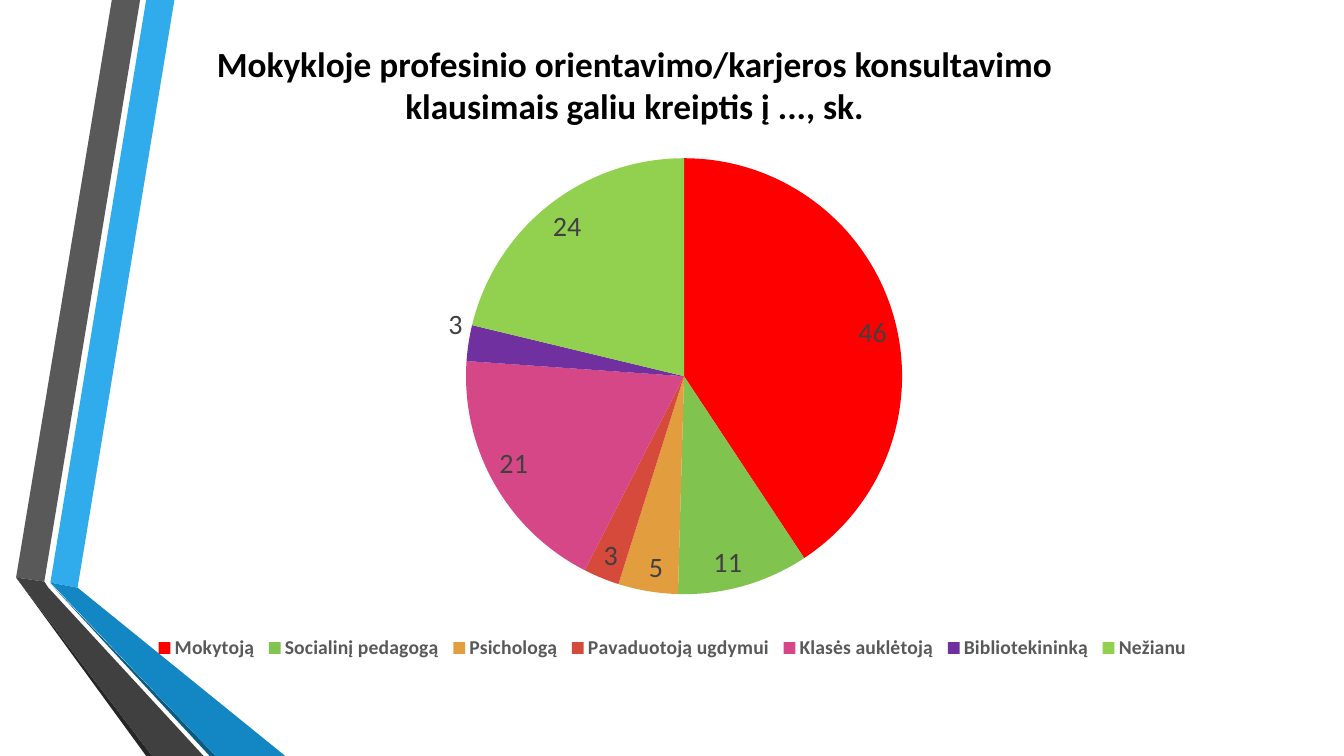
from dataclasses import dataclass

from lxml import etree
from pptx import Presentation
from pptx.chart.chart import Chart
from pptx.chart.data import CategoryChartData
from pptx.dml.color import RGBColor
from pptx.enum.chart import XL_CHART_TYPE, XL_LABEL_POSITION, XL_LEGEND_POSITION
from pptx.enum.text import MSO_ANCHOR, PP_ALIGN
from pptx.oxml.ns import qn
from pptx.slide import Slide
from pptx.text.text import Font
from pptx.util import Inches, Pt

PIE = XL_CHART_TYPE.PIE
INSIDE = XL_LABEL_POSITION.INSIDE_END
OUTSIDE = XL_LABEL_POSITION.OUTSIDE_END
BOTTOM = XL_LEGEND_POSITION.BOTTOM
MIDDLE = MSO_ANCHOR.MIDDLE
CENTER = PP_ALIGN.CENTER

FACE = "Calibri"
TITLE = "Mokykloje profesinio orientavimo/karjeros konsultavimo klausimais galiu kreiptis į ..., sk."
COLORS = {
    "sky": "30ACEC", "blue": "1287C3", "navy": "0C5A82",
    "gray": "595959", "dark": "404040", "coal": "262626", "black": "000000",
    "red": "FF0000", "green": "80C34F", "orange": "E29D3E", "brick": "D64A3B",
    "pink": "D64787", "purple": "7030A0", "lime": "92D050",
}


@dataclass(frozen=True)
class Band:
    color: str
    points: tuple[tuple[float, float], ...]


@dataclass(frozen=True)
class Slice:
    name: str
    value: int
    color: str
    outside: bool = False


@dataclass(frozen=True)
class Frame:
    """Part of the chart area, as fractions of its size."""
    x: float
    y: float
    w: float
    h: float


BANDS = (
    Band("sky", ((0.5, 5.78), (0.77, 5.83), (1.73, 0), (1.45, 0))),
    Band("gray", ((1.39, 0), (1.11, 0), (0.16, 5.73), (0.44, 5.77))),
    Band("coal", ((0.16, 5.73), (1.45, 7.5), (1.51, 7.5))),
    Band("navy", ((0.5, 5.79), (2.08, 7.5), (2.14, 7.5))),
    Band("blue", ((0.5, 5.78), (2.14, 7.5), (2.83, 7.5), (0.77, 5.83))),
    Band("dark", ((2.02, 7.5), (0.48, 5.83), (0.44, 5.77), (0.16, 5.73), (1.51, 7.5))),
)
SLICES = (
    Slice("Mokytoją", 46, "red"),
    Slice("Socialinį pedagogą", 11, "green"),
    Slice("Psichologą", 5, "orange"),
    Slice("Pavaduotoją ugdymui", 3, "brick"),
    Slice("Klasės auklėtoją", 21, "pink"),
    Slice("Bibliotekininką", 3, "purple", outside=True),
    Slice("Nežianu", 24, "lime"),
)
PLOT = Frame(0.32, 0.03, 0.38, 0.81)
KEY = Frame(0.05, 0.91, 0.9, 0.06)


def paint(color: str) -> RGBColor:
    return RGBColor.from_string(COLORS[color])


def style(font: Font, size: float, color: str, bold: bool = False) -> None:
    font.name = FACE
    font.size = Pt(size)
    font.bold = bold
    font.color.rgb = paint(color)


def draw_band(slide: Slide, band: Band) -> None:
    first, *rest = [(round(x * 100), round(y * 100)) for x, y in band.points]
    pen = slide.shapes.build_freeform(*first, scale=Inches(0.01))
    pen.add_line_segments(rest, close=True)
    shape = pen.convert_to_shape()
    shape.shadow.inherit = False
    shape.fill.solid()
    shape.fill.fore_color.rgb = paint(band.color)
    shape.line.fill.background()


def draw_title(slide: Slide) -> None:
    box = slide.shapes.add_textbox(Inches(1.42), Inches(0.42), Inches(9.75), Inches(0.83))
    frame = box.text_frame
    frame.word_wrap = True
    frame.vertical_anchor = MIDDLE
    frame.text = TITLE
    line = frame.paragraphs[0]
    line.alignment = CENTER
    style(line.runs[0].font, 25.2, "black", bold=True)


def place(chart: Chart, tag: str, frame: Frame, inner: bool = False) -> None:
    """Fix the place of the plot or the legend in the chart."""
    part = next(chart.element.iter(qn(tag)))
    for old in part.findall(qn("c:layout")):
        part.remove(old)
    layout = etree.Element(qn("c:layout"))
    manual = etree.SubElement(layout, qn("c:manualLayout"))
    rules = [("layoutTarget", "inner")] if inner else []
    rules += [("xMode", "edge"), ("yMode", "edge")]
    rules += [(key, str(getattr(frame, key))) for key in "xywh"]
    for key, value in rules:
        etree.SubElement(manual, qn(f"c:{key}"), val=value)
    before = part.find(qn("c:legendPos"))
    part.insert(0 if before is None else part.index(before) + 1, layout)


def draw_chart(slide: Slide) -> None:
    data = CategoryChartData()
    data.categories = [item.name for item in SLICES]
    data.add_series("Series 1", [item.value for item in SLICES])
    chart = slide.shapes.add_chart(
        PIE, Inches(0.92), Inches(1.41), Inches(11.5), Inches(5.34), data).chart
    chart.has_title = False
    style(chart.font, 10, "black")

    chart.has_legend = True
    chart.legend.position = BOTTOM
    chart.legend.include_in_layout = False
    style(chart.legend.font, 14, "gray", bold=True)

    plot = chart.plots[0]
    plot.vary_by_categories = True
    series = plot.series[0]
    labels = series.data_labels
    labels.show_value = True
    labels.position = INSIDE
    style(labels.font, 20, "dark")
    for index, item in enumerate(SLICES):
        point = series.points[index]
        point.format.fill.solid()
        point.format.fill.fore_color.rgb = paint(item.color)
        point.format.line.fill.background()
        if item.outside:
            style(point.data_label.font, 20, "dark")
            point.data_label.position = OUTSIDE

    place(chart, "c:plotArea", PLOT, inner=True)
    place(chart, "c:legend", KEY)


def main() -> None:
    deck = Presentation()
    deck.slide_width = Inches(13.33)
    deck.slide_height = Inches(7.5)
    slide = deck.slides.add_slide(deck.slide_layouts[6])
    for band in BANDS:
        draw_band(slide, band)
    draw_title(slide)
    draw_chart(slide)
    deck.save("out.pptx")


if __name__ == "__main__":
    main()
